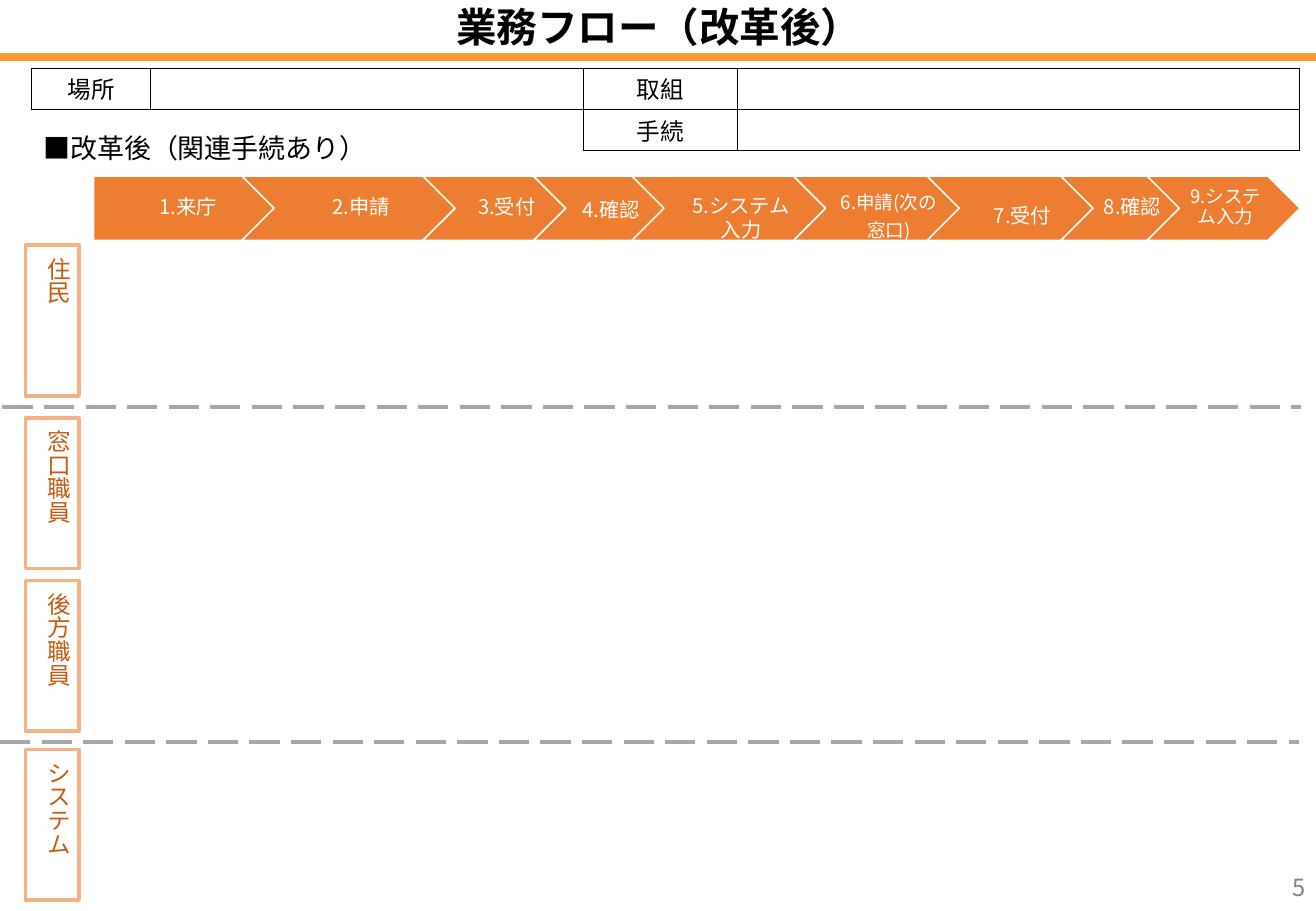
from lxml import etree
from pptx import Presentation
from pptx import util as u
from pptx.dml.color import RGBColor
from pptx.enum import dml, shapes, text
from pptx.oxml import ns

FONT = "Noto Sans CJK JP"
COLORS = {
    "black": "000000", "white": "FFFFFF", "rule": "FF9933", "step": "ED7D31",
    "lane_line": "F4B183", "lane_text": "C55A11", "divider": "A6A6A6", "number": "808080",
}
LEFT, CENTER, RIGHT = text.PP_ALIGN.LEFT, text.PP_ALIGN.CENTER, text.PP_ALIGN.RIGHT
TOP, MIDDLE = text.MSO_ANCHOR.TOP, text.MSO_ANCHOR.MIDDLE

STEP_TOP, STEP_HEIGHT, STEP_OVERLAP = 1.45, 0.53, 0.44
STEPS = [
    ("1.来庁", 1.66, 12, 0.9, 0.04, MIDDLE),
    ("2.申請", 1.93, 12, 0.9, 0.04, MIDDLE),
    ("3.受付", 1.35, 12, 0.9, 0.04, MIDDLE),
    ("4.確認", 1.25, 12, u.Pt(14), 0.2, TOP),
    ("5.システム\n入力", 1.77, 12, u.Pt(14), 0.2, MIDDLE),
    ("6.申請(次の窓口)", 1.54, 11, u.Pt(16.8), 0.12, MIDDLE),
    ("7.受付", 1.54, 12, u.Pt(16.8), 0.12, MIDDLE),
    ("8.確認", 1.15, 12, 0.9, 0.04, MIDDLE),
    ("9.システム入力", 1.26, 11, 0.9, 0.03, MIDDLE),
]
LANES = [("住民", 2.02), ("窓口職員", 3.44), ("後方職員", 4.78), ("システム", 6.17)]


def color(name):
    return RGBColor.from_string(COLORS[name])


def inches(*lengths):
    return [u.Inches(length) for length in lengths]


def write(frame, content, size, color_name, align, spacing=None, bold=False):
    frame.text = content
    for para in frame.paragraphs:
        para.alignment = align
        if spacing:
            para.line_spacing = spacing
        for span in para.runs:
            span.font.size = u.Pt(size)
            span.font.bold = bold
            span.font.color.rgb = color(color_name)
            span.font.name = FONT
            east_asian = etree.SubElement(span.font._element, ns.qn("a:ea"))
            east_asian.set("typeface", FONT)


def add_text(page, place, content, size, color_name, align, anchor=TOP,
             spacing=None, insets=(0.1, 0.05, 0.1, 0.05)):
    frame = page.shapes.add_textbox(*inches(*place)).text_frame
    frame.word_wrap = True
    frame.vertical_anchor = anchor
    (frame.margin_left, frame.margin_top,
     frame.margin_right, frame.margin_bottom) = inches(*insets)
    write(frame, content, size, color_name, align, spacing)


def add_line(page, start, end, color_name, width, dash=None):
    line = page.shapes.add_connector(shapes.MSO_CONNECTOR.STRAIGHT, *inches(*start, *end))
    line.line.color.rgb = color(color_name)
    line.line.width = u.Pt(width)
    if dash:
        line.line.dash_style = dash
    etree.SubElement(line._element.spPr, ns.qn("a:effectLst"))


def add_box(page, kind, place, fill, outline, width):
    box = page.shapes.add_shape(kind, *inches(*place))
    box.shadow.inherit = False
    if fill:
        box.fill.solid()
        box.fill.fore_color.rgb = color(fill)
    else:
        box.fill.background()
    box.line.color.rgb = color(outline)
    box.line.width = u.Pt(width)
    return box


def add_borders(cell):
    properties = cell._tc.get_or_add_tcPr()
    for position, side in enumerate(("lnL", "lnR", "lnT", "lnB")):
        border = etree.Element(ns.qn(f"a:{side}"), w=str(u.Pt(0.5)))
        solid = etree.SubElement(border, ns.qn("a:solidFill"))
        etree.SubElement(solid, ns.qn("a:srgbClr"), val=COLORS["black"])
        properties.insert(position, border)


def add_table(page, left, widths, labels):
    height = 0.34
    place = inches(left, 0.56, sum(widths), height * len(labels))
    table = page.shapes.add_table(len(labels), len(widths), *place).table
    table.first_row = table.horz_banding = False
    for column, width in zip(table.columns, widths):
        column.width = u.Inches(width)
    for row, label in zip(table.rows, labels):
        row.height = u.Inches(height)
        for cell, content in zip(row.cells, (label, "")):
            cell.fill.background()
            cell.vertical_anchor = MIDDLE
            cell.margin_top = cell.margin_bottom = u.Inches(0.02)
            write(cell.text_frame, content, 14, "black", CENTER)
            if not content:
                para = cell.text_frame.paragraphs[0]
                etree.SubElement(para._p, ns.qn("a:endParaRPr"), sz="1400")
            add_borders(cell)


def add_title(page, content):
    title = page.shapes.title
    title.left, title.top, title.width, title.height = inches(0.48, 0.05, 9.88, 0.38)
    title.text_frame.vertical_anchor = MIDDLE
    title.text_frame.auto_size = text.MSO_AUTO_SIZE.NONE
    write(title.text_frame, content, 24, "black", CENTER, 0.9, True)


def add_lane(page, label, top):
    place = (0.21, top, 0.44, 1.24)
    box = add_box(page, shapes.MSO_SHAPE.RECTANGLE, place, None, "lane_line", 2.25)
    frame = box.text_frame
    frame.word_wrap = True
    frame.vertical_anchor = TOP
    frame.auto_size = text.MSO_AUTO_SIZE.SHAPE_TO_FIT_TEXT
    frame._txBody.bodyPr.set("vert", "eaVert")
    write(frame, label, 14, "lane_text", CENTER)


def add_steps(page):
    left = 0.77
    point = STEP_HEIGHT / 2
    for index, (label, width, size, spacing, inset, anchor) in enumerate(STEPS):
        kind = shapes.MSO_SHAPE.CHEVRON if index else shapes.MSO_SHAPE.PENTAGON
        add_box(page, kind, (left, STEP_TOP, width, STEP_HEIGHT), "step", "white", 1)
        text_left = left + point if index else left
        text_width = width - 2 * point if index else width - point / 2
        add_text(page, (text_left, STEP_TOP, text_width, STEP_HEIGHT), label, size,
                 "white", CENTER, anchor, spacing, (0.05, inset, 0.02, 0.04))
        left += width - STEP_OVERLAP


def main():
    deck = Presentation()
    deck.slide_width, deck.slide_height = inches(10.83, 7.5)
    page = deck.slides.add_slide(deck.slide_layouts[5])
    add_line(page, (0, 0.47), (10.83, 0.47), "rule", 5)
    add_title(page, "業務フロー（改革後）")
    add_table(page, 0.26, (0.98, 3.56), ["場所"])
    add_table(page, 4.8, (1.27, 4.62), ["取組", "手続"])
    add_text(page, (0.26, 1.03, 4.54, 0.37), "■改革後（関連手続あり）", 16, "black", LEFT)
    for label, top in LANES:
        add_lane(page, label, top)
    for left, top in ((0.02, 3.35), (0, 6.11)):
        add_line(page, (left, top), (left + 10.69, top), "divider", 2.25,
                 dml.MSO_LINE.LONG_DASH)
    add_steps(page)
    add_text(page, (8.4, 7.1, 2.44, 0.4), "5", 14, "number", RIGHT, MIDDLE)
    deck.save("out.pptx")


if __name__ == "__main__":
    main()
